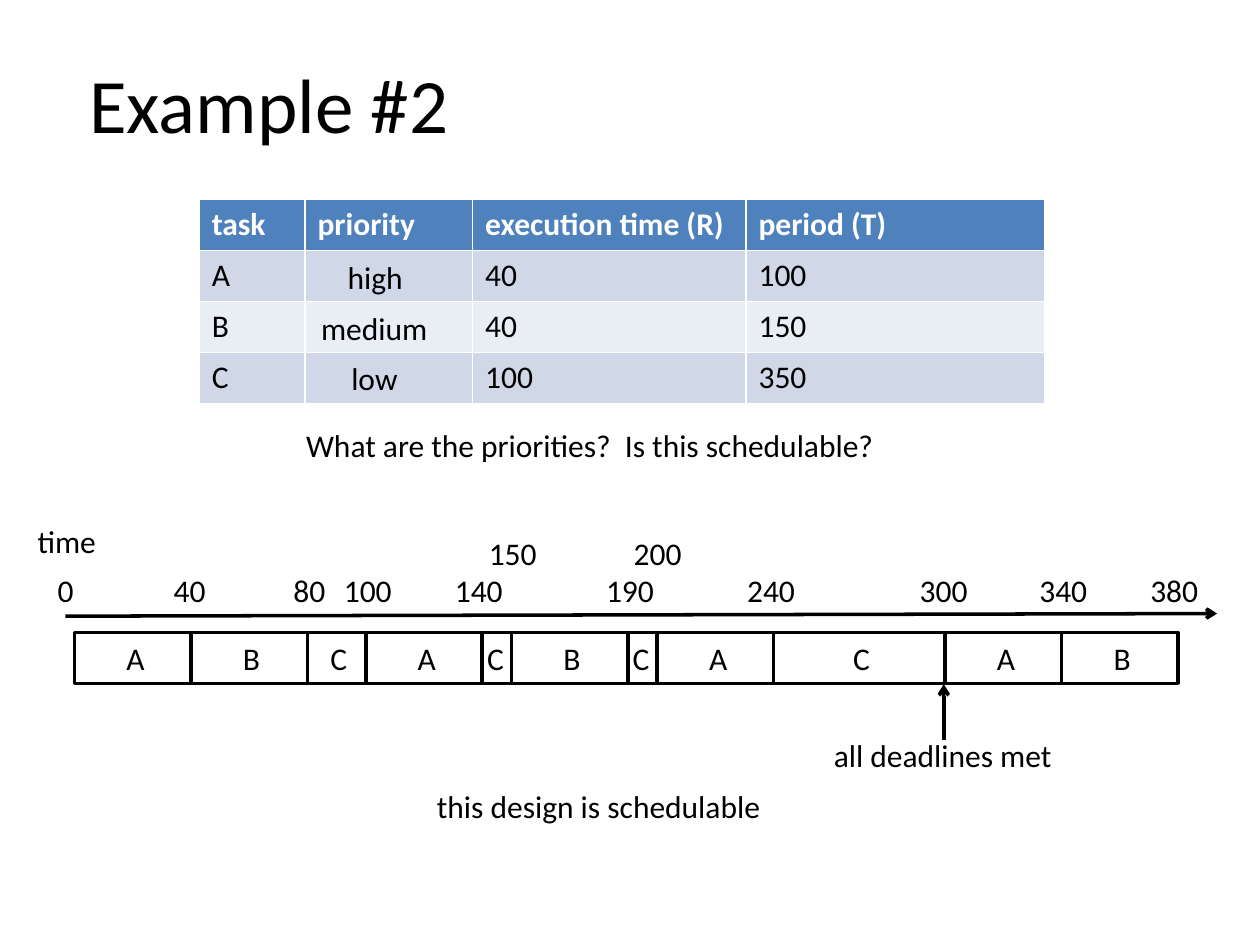
from dataclasses import dataclass

from lxml.etree import SubElement
from pptx import Presentation
from pptx.dml.color import RGBColor
from pptx.enum.shapes import MSO_CONNECTOR, MSO_SHAPE
from pptx.enum.text import MSO_AUTO_SIZE
from pptx.oxml.ns import qn
from pptx.shapes.shapetree import _BaseShapes
from pptx.slide import Slide
from pptx.text.text import TextFrame
from pptx.util import Pt


@dataclass(frozen=True)
class Theme:
    font: str = "Calibri"
    title_size: float = 44
    body_size: float = 18
    ink: RGBColor = RGBColor(0, 0, 0)
    header_ink: RGBColor = RGBColor(255, 255, 255)
    header_fill: RGBColor = RGBColor(0x4F, 0x81, 0xBD)
    odd_row_fill: RGBColor = RGBColor(0xD0, 0xD8, 0xE8)
    even_row_fill: RGBColor = RGBColor(0xE9, 0xED, 0xF4)
    stroke: float = 2


@dataclass(frozen=True)
class Label:
    text: str
    left: float
    top: float
    width: float
    height: float = 29.1
    size: float = 18


@dataclass(frozen=True)
class Tick:
    time: str
    center: float
    raised: bool = False


@dataclass(frozen=True)
class Slot:
    task: str
    width: float


@dataclass(frozen=True)
class Arrow:
    x1: float
    y1: float
    x2: float
    y2: float


THEME = Theme()

LABELS = [
    Label("Example #2", 43.9, 28.8, 221.8, 60.5, THEME.title_size),
    Label("What are the priorities?  Is this schedulable?", 167.8, 239.8, 342.7),
    Label("this design is schedulable", 242.6, 446.4, 205.9),
    Label("high", 191.5, 144, 46.8),
    Label("medium", 176.4, 172.8, 76.3),
    Label("low", 193.7, 201.6, 41),
    Label("time", 14.4, 294.5, 48.2),
    Label("all deadlines met", 469.4, 416.9, 140.4),
]

TASK_ROWS = [
    ["task", "priority", "execution time (R)", "period (T)"],
    ["A", "", "40", "100"],
    ["B", "", "40", "150"],
    ["C", "", "100", "350"],
]
TABLE_LEFT, TABLE_TOP, ROW_HEIGHT = 113.8, 113.8, 28.8
COLUMN_WIDTHS = [60.5, 95.8, 156.2, 170.6]

TICKS = [
    Tick("0", 37.8), Tick("40", 108.7), Tick("80", 177.1), Tick("100", 210.6),
    Tick("140", 274), Tick("150", 293.4, True), Tick("190", 360.4),
    Tick("200", 376.2, True), Tick("240", 441), Tick("300", 539.6),
    Tick("340", 608), Tick("380", 671.4),
]
TICK_TOP, RAISED_TICK_TOP = 322.6, 301.7
DIGIT_WIDTH, SIDE_INSETS = 9.3, 14.4

FULL_RUN, SHORT_RUN = 66.6, 16.65
SLOTS = [
    Slot("A", FULL_RUN), Slot("B", FULL_RUN), Slot("C", 33.3),
    Slot("A", FULL_RUN), Slot("C", SHORT_RUN), Slot("B", FULL_RUN),
    Slot("C", SHORT_RUN), Slot("A", FULL_RUN), Slot("C", 97.9),
    Slot("A", FULL_RUN), Slot("B", FULL_RUN),
]
SCHEDULE_LEFT, SCHEDULE_TOP, SLOT_HEIGHT = 42.5, 361.4, 29.1
LETTER_WIDTH = 21.4

TIME_AXIS = Arrow(37.4, 352.1, 695.5, 350.6)
DEADLINE_POINTER = Arrow(539.3, 422.6, 539.3, 391)


def write_text(frame: TextFrame, text: str, size: float, ink: RGBColor,
               bold: bool = False) -> None:
    run = frame.paragraphs[0].add_run()
    run.text = text
    run.font.name = THEME.font
    run.font.size = Pt(size)
    run.font.color.rgb = ink
    run.font.bold = bold


def draw_label(shapes: _BaseShapes, label: Label) -> None:
    box = shapes.add_textbox(Pt(label.left), Pt(label.top),
                             Pt(label.width), Pt(label.height))
    box.text_frame.word_wrap = False
    box.text_frame.auto_size = MSO_AUTO_SIZE.SHAPE_TO_FIT_TEXT
    write_text(box.text_frame, label.text, label.size, THEME.ink)


def draw_task_table(slide: Slide) -> None:
    table = slide.shapes.add_table(
        len(TASK_ROWS), len(COLUMN_WIDTHS), Pt(TABLE_LEFT), Pt(TABLE_TOP),
        Pt(sum(COLUMN_WIDTHS)), Pt(ROW_HEIGHT * len(TASK_ROWS))).table
    for column, width in zip(table.columns, COLUMN_WIDTHS):
        column.width = Pt(width)
    for row, values in enumerate(TASK_ROWS):
        header = row == 0
        band = THEME.odd_row_fill if row % 2 else THEME.even_row_fill
        for column, value in enumerate(values):
            cell = table.cell(row, column)
            cell.fill.solid()
            cell.fill.fore_color.rgb = THEME.header_fill if header else band
            if value:
                write_text(cell.text_frame, value, THEME.body_size,
                           THEME.header_ink if header else THEME.ink, header)


def draw_tick(slide: Slide, tick: Tick) -> None:
    width = SIDE_INSETS + DIGIT_WIDTH * len(tick.time)
    top = RAISED_TICK_TOP if tick.raised else TICK_TOP
    draw_label(slide.shapes, Label(tick.time, tick.center - width / 2, top, width))


def draw_slot(slide: Slide, slot: Slot, left: float) -> None:
    """Draw one run of a task as a grouped frame and letter."""
    group = slide.shapes.add_group_shape()
    frame = group.shapes.add_shape(MSO_SHAPE.RECTANGLE, Pt(left), Pt(SCHEDULE_TOP),
                                   Pt(slot.width), Pt(SLOT_HEIGHT))
    frame.shadow.inherit = False
    frame.fill.background()
    frame.line.color.rgb = THEME.ink
    frame.line.width = Pt(THEME.stroke)
    nudge = 2 if slot.width == SHORT_RUN else 0
    letter_left = left + (slot.width - LETTER_WIDTH) / 2 - nudge
    draw_label(group.shapes, Label(slot.task, letter_left, SCHEDULE_TOP, LETTER_WIDTH))


def draw_arrow(slide: Slide, arrow: Arrow) -> None:
    connector = slide.shapes.add_connector(
        MSO_CONNECTOR.STRAIGHT, Pt(arrow.x1), Pt(arrow.y1), Pt(arrow.x2), Pt(arrow.y2))
    connector.line.color.rgb = THEME.ink
    connector.line.width = Pt(THEME.stroke)
    SubElement(connector.line._get_or_add_ln(), qn("a:tailEnd"), type="arrow")
    SubElement(connector._element.spPr, qn("a:effectLst"))


def main() -> None:
    deck = Presentation()
    deck.slide_width, deck.slide_height = Pt(720), Pt(540)
    slide = deck.slides.add_slide(deck.slide_layouts[6])
    draw_task_table(slide)
    for label in LABELS:
        draw_label(slide.shapes, label)
    for tick in TICKS:
        draw_tick(slide, tick)
    left = SCHEDULE_LEFT
    for slot in SLOTS:
        draw_slot(slide, slot, left)
        left += slot.width
    for arrow in (TIME_AXIS, DEADLINE_POINTER):
        draw_arrow(slide, arrow)
    deck.save("out.pptx")


if __name__ == "__main__":
    main()
